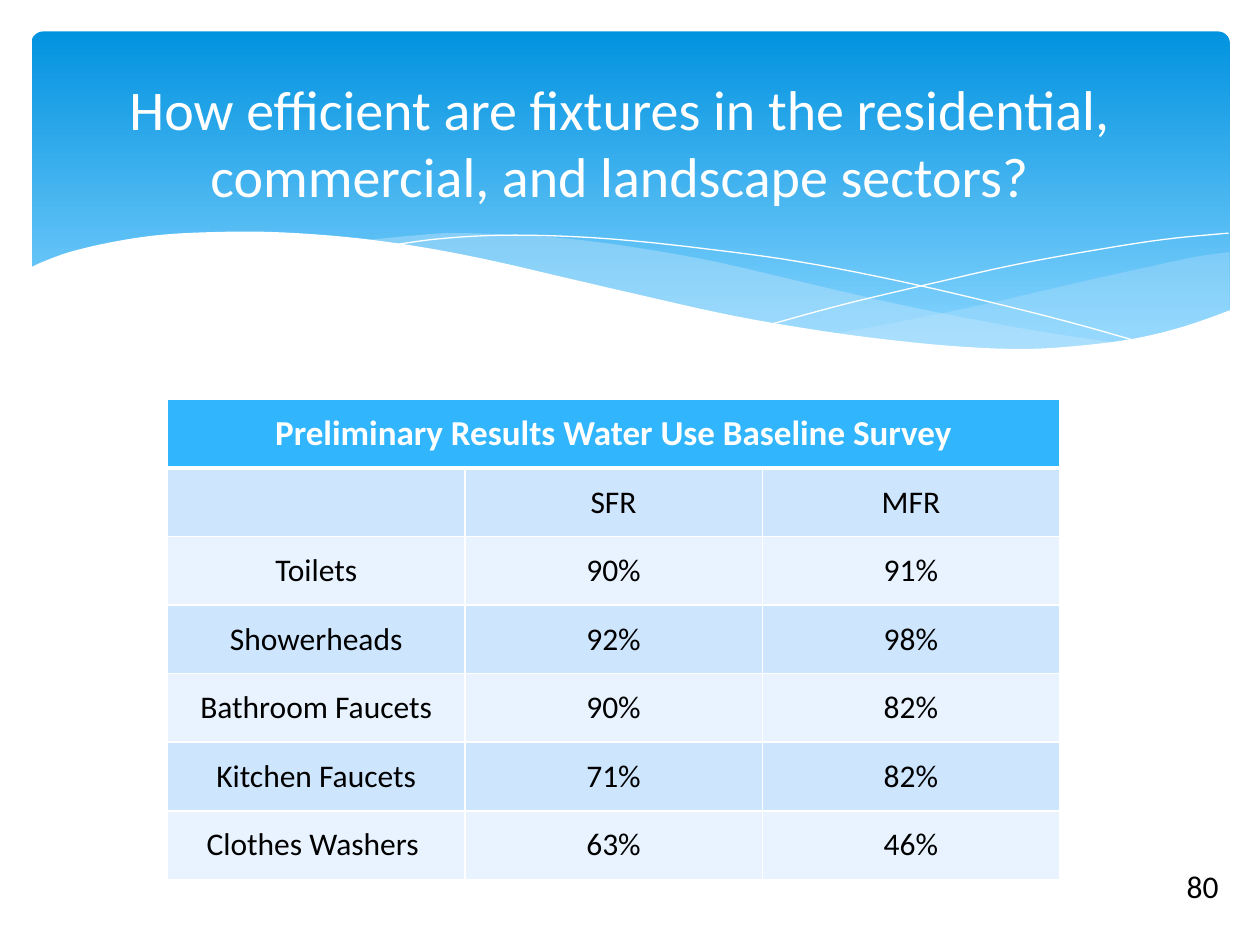
from lxml import etree
from pptx import Presentation
from pptx.dml.color import RGBColor
from pptx.enum.shapes import MSO_SHAPE
from pptx.enum.text import MSO_ANCHOR, PP_ALIGN
from pptx.oxml import parse_xml
from pptx.oxml.ns import nsdecls, qn
from pptx.util import Inches, Pt


def rgb(code):
    return RGBColor.from_string(code)


def curve(knots, steps=6):
    """Smooth run of points through the knots (Catmull-Rom)."""
    ends = [knots[0]] + knots + [knots[-1]]
    points = [knots[0]]
    for a, b, c, d in zip(ends, ends[1:], ends[2:], ends[3:]):
        for i in range(1, steps + 1):
            t = i / steps
            points.append(tuple(
                (2 * q + (r - p) * t + (2 * p - 5 * q + 4 * r - s) * t ** 2
                 + (3 * q - p - 3 * r + s) * t ** 3) / 2
                for p, q, r, s in zip(a, b, c, d)))
    return points


prs = Presentation()
prs.slide_width, prs.slide_height = Inches(10), Inches(7.5)
slide = prs.slides.add_slide(prs.slide_layouts[6])
shapes = slide.shapes

# Blue banner
banner = shapes.add_shape(MSO_SHAPE.ROUNDED_RECTANGLE, Inches(0.25),
                          Inches(0.25), Inches(9.51), Inches(2.7))
banner.adjustments[0] = 0.034
banner.shadow.inherit = False
banner.line.fill.background()
banner.fill.gradient()
banner.fill.gradient_angle = 270
stops = banner.fill.gradient_stops
for stop, place, color in zip(stops, (0, 0.9), ("0293E0", "83D3FE")):
    stop.position = place
    stop.color.rgb = rgb(color)

# Waves: points, fill, opacity in percent (no fill means a thin white line)
right = (curve([(9.76, 2), (9.48, 2.04), (9.06, 2.13), (8.61, 2.23),
                (7.79, 2.42), (7.06, 2.57), (6.61, 2.65)])
         + curve([(6.61, 2.65), (7.05, 2.71), (7.57, 2.76), (8.03, 2.78),
                  (8.54, 2.76), (8.97, 2.7), (9.35, 2.62), (9.76, 2.47)]))
middle = (curve([(8.93, 2.73), (8.37, 2.65), (7.75, 2.54), (7.06, 2.4),
                 (6.29, 2.22), (5.69, 2.08), (5.14, 1.98), (4.65, 1.91),
                 (4.2, 1.87), (3.61, 1.85), (3.28, 1.87), (2.86, 1.91)])
          + curve([(2.86, 1.91), (3.42, 1.99), (4.04, 2.11), (4.49, 2.22),
                   (5.3, 2.4), (6.01, 2.55), (6.65, 2.66), (7.22, 2.74),
                   (7.73, 2.77), (8.18, 2.78), (8.57, 2.77), (8.93, 2.73)]))
falling = curve([(3.09, 1.95), (3.44, 1.9), (3.87, 1.87), (4.33, 1.87),
                 (4.89, 1.9), (5.56, 1.97), (6.36, 2.08), (7.27, 2.26),
                 (8.31, 2.51), (9.07, 2.72)])
rising = curve([(6.13, 2.57), (6.72, 2.41), (7.48, 2.23), (8.06, 2.1),
                (8.66, 1.99), (9.24, 1.9), (9.75, 1.85)])
front = (curve([(9.77, 2.46), (9.4, 2.59), (8.99, 2.69), (8.5, 2.75),
                (8.09, 2.77), (7.61, 2.75), (7.08, 2.7), (6.48, 2.62),
                (5.79, 2.5), (5.03, 2.33), (4.47, 2.2), (3.91, 2.07),
                (3.4, 1.97), (2.92, 1.9), (2.5, 1.86), (2.11, 1.84),
                (1.77, 1.84), (1.32, 1.86), (0.95, 1.91), (0.59, 1.99),
                (0.36, 2.07), (0.23, 2.13)])
         + [(0.23, 3.29), (9.77, 3.29)])
waves = [(right, "C6E7FC", 29), (middle, "C6E7FC", 40), (falling, None, 100),
         (rising, None, 100), (front, "FFFFFF", 100)]
for points, color, alpha in waves:
    spots = [(Inches(x), Inches(y)) for x, y in points]
    pen = shapes.build_freeform(*spots[0])
    pen.add_line_segments(spots[1:], close=color is not None)
    wave = pen.convert_to_shape()
    wave.shadow.inherit = False
    if color is None:
        wave.fill.background()
        wave.line.color.rgb = rgb("FFFFFF")
        wave.line.width = Pt(0)
        continue
    wave.line.fill.background()
    wave.fill.solid()
    wave.fill.fore_color.rgb = rgb(color)
    if alpha < 100:
        tint = wave.fill._xPr.find(".//" + qn("a:srgbClr"))
        etree.SubElement(tint, qn("a:alpha"), val=str(alpha * 1000))

# Page number and title
texts = [("80", (9.32, 6.83, 0.46, 0.4), 18, "000000", False),
         ("How efficient are fixtures in the residential, commercial, "
          "and landscape sectors?", (0.42, 0.25, 9, 1.75), 32, "FFFFFF", True)]
for text, area, size, color, title in texts:
    frame = shapes.add_textbox(*map(Inches, area)).text_frame
    frame.word_wrap = title
    frame.text = text
    para = frame.paragraphs[0]
    if title:
        frame.vertical_anchor = MSO_ANCHOR.MIDDLE
        para.alignment = PP_ALIGN.CENTER
    font = para.runs[0].font
    font.name, font.size = "Calibri", Pt(size)
    font.color.rgb = rgb(color)

# Survey table
rows = [("Preliminary Results Water Use Baseline Survey", "", ""),
        ("", "SFR", "MFR"),
        ("Toilets", "90%", "91%"),
        ("Showerheads", "92%", "98%"),
        ("Bathroom Faucets", "90%", "82%"),
        ("Kitchen Faucets", "71%", "82%"),
        ("Clothes Washers ", "63%", "46%")]
table = shapes.add_table(len(rows), 3, Inches(1.33), Inches(3.17),
                         Inches(7.08), Inches(3.81)).table
table.cell(0, 0).merge(table.cell(0, 2))
for r, row in enumerate(rows):
    head = r == 0
    for c, text in enumerate(row):
        cell = table.cell(r, c)
        props = cell._tc.get_or_add_tcPr()
        for side in "LRTB":
            thick = (r, side) in ((0, "B"), (1, "T"))
            props.append(parse_xml(
                f'<a:ln{side} {nsdecls("a")} w="{Pt(3 if thick else 1)}">'
                '<a:solidFill><a:srgbClr val="FFFFFF"/></a:solidFill>'
                f'</a:ln{side}>'))
        cell.fill.solid()
        cell.fill.fore_color.rgb = rgb(
            "31B6FD" if head else ("E8F3FF", "CEE5FE")[r % 2])
        cell.vertical_anchor = MSO_ANCHOR.MIDDLE
        if not text:
            continue
        cell.text = text
        para = cell.text_frame.paragraphs[0]
        para.alignment = PP_ALIGN.CENTER
        font = para.runs[0].font
        font.name, font.size, font.bold = "Calibri", Pt(20 if head else 18), head
        font.color.rgb = rgb("FFFFFF" if head else "000000")

prs.save("out.pptx")
